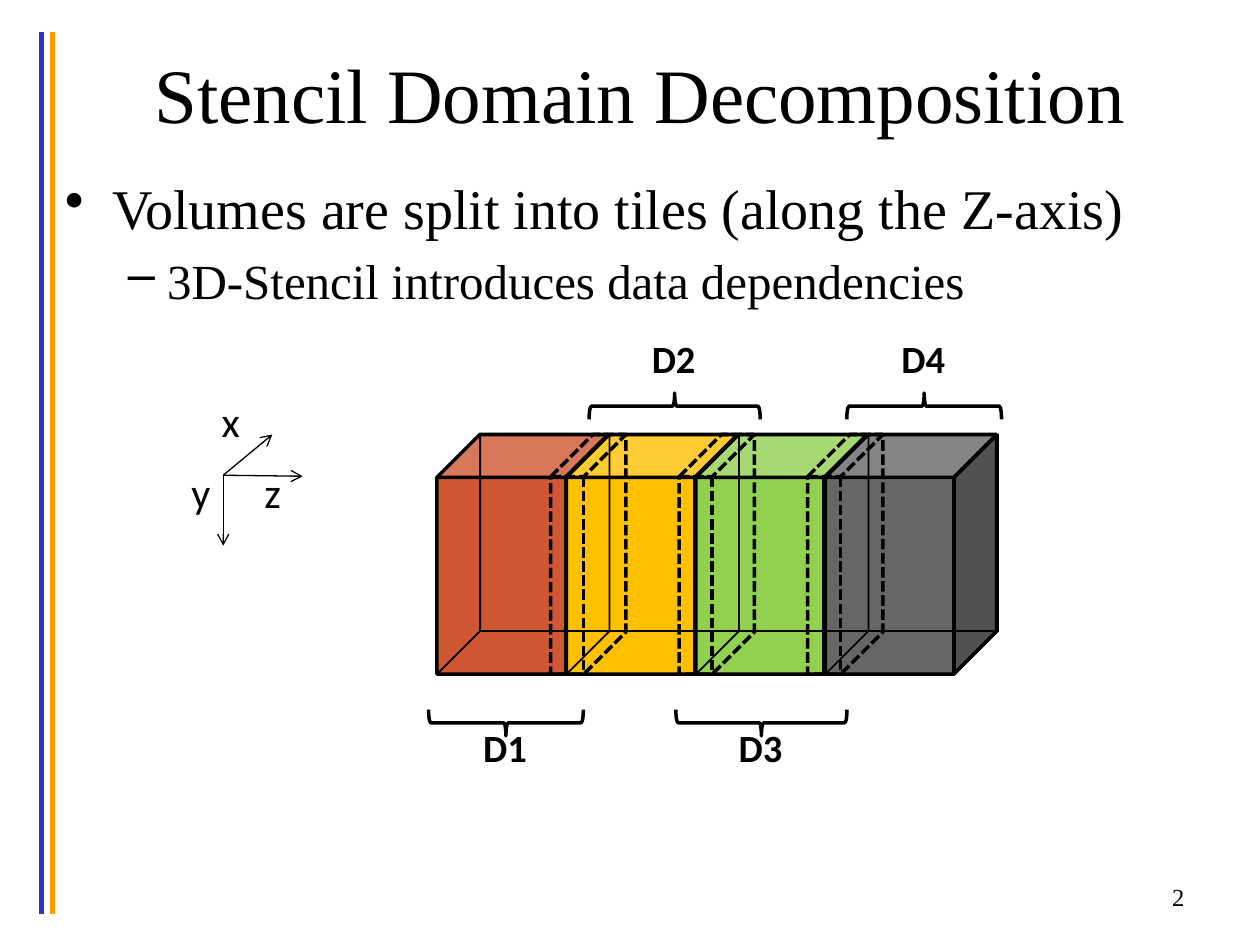
from lxml.etree import SubElement
from pptx import Presentation
from pptx.dml.color import RGBColor
from pptx.enum.dml import MSO_LINE
from pptx.enum.shapes import MSO_CONNECTOR, MSO_SHAPE
from pptx.enum.text import MSO_ANCHOR, PP_ALIGN
from pptx.oxml.ns import qn
from pptx.util import Cm, Pt

BLACK = "000000"
SERIF = "Times New Roman"
SANS = "Calibri"
TOP, HEIGHT, DEPTH = 8.76, 4.83, 0.87
LEFT, TILE = 8.81, 2.61


def color(value):
    """Turn a hex string into a colour."""
    return RGBColor.from_string(value)


class SlideBuilder:
    """Draw styled elements on the current slide."""

    def __init__(self, slide):
        """Keep the slide to draw on."""
        self.slide = slide

    def add_span(self, para, text, size, font, bold=False):
        """Add one formatted run to a paragraph."""
        span = para.add_run()
        span.text = text
        span.font.size = Pt(size)
        span.font.name = font
        span.font.bold = bold
        span.font.color.rgb = color(BLACK)

    def title(self, text, left, top, width, height):
        """Place and fill the title placeholder."""
        box = self.slide.shapes.title
        box.left, box.top, box.width, box.height = map(Cm, (left, top, width, height))
        frame = box.text_frame
        frame.vertical_anchor = MSO_ANCHOR.TOP
        frame.margin_top = Cm(0.3)
        para = frame.paragraphs[0]
        para.alignment = PP_ALIGN.CENTER
        self.add_span(para, text, 44, SERIF)

    def label(self, text, left, top, width, height, size, font=SANS,
              bold=False, align=PP_ALIGN.LEFT):
        """Add a one-line text box."""
        box = self.slide.shapes.add_textbox(Cm(left), Cm(top), Cm(width), Cm(height))
        box.text_frame.word_wrap = False
        para = box.text_frame.paragraphs[0]
        para.alignment = align
        self.add_span(para, text, size, font, bold)

    def bullets(self, items, left, top, width, height):
        """Add a bulleted list of (text, size, level, mark, margin, hang)."""
        box = self.slide.shapes.add_textbox(Cm(left), Cm(top), Cm(width), Cm(height))
        frame = box.text_frame
        frame.word_wrap = True
        for index, (text, size, level, mark, margin, hang) in enumerate(items):
            para = frame.add_paragraph() if index else frame.paragraphs[0]
            para.level = level
            para.space_before = Pt(size * 0.2)
            self.add_span(para, text, size, SERIF)
            properties = para._p.get_or_add_pPr()
            properties.set("marL", str(Cm(margin)))
            properties.set("indent", str(-Cm(hang)))
            SubElement(properties, qn("a:buChar")).set("char", mark)

    def line(self, start, end, stroke, weight, arrow=False):
        """Add a straight line, optionally with an arrowhead."""
        connector = self.slide.shapes.add_connector(
            MSO_CONNECTOR.STRAIGHT, *map(Cm, (*start, *end)))
        connector.line.color.rgb = color(stroke)
        connector.line.width = Pt(weight)
        properties = connector._element.spPr
        if arrow:
            SubElement(properties.find(qn("a:ln")), qn("a:tailEnd")).set("type", "arrow")
        SubElement(properties, qn("a:effectLst"))

    def shape(self, kind, left, top, width, height, weight, fill=None):
        """Add an outlined preset shape."""
        shape = self.slide.shapes.add_shape(
            kind, Cm(left), Cm(top), Cm(width), Cm(height))
        shape.shadow.inherit = False
        shape.line.color.rgb = color(BLACK)
        shape.line.width = Pt(weight)
        if fill:
            shape.fill.solid()
            shape.fill.fore_color.rgb = color(fill)
        else:
            shape.fill.background()
        return shape

    def cube(self, left, width, height, depth, weight, fill=None, dashed=False):
        """Add a cube in the volume row."""
        cube = self.shape(MSO_SHAPE.CUBE, left, TOP, width, height, weight, fill)
        cube.adjustments[0] = depth
        if dashed:
            cube.line.dash_style = MSO_LINE.SQUARE_DOT

    def brace(self, text, center, middle, length, rotation, label_top):
        """Add a turned brace with its domain name."""
        thick = 0.53
        brace = self.shape(MSO_SHAPE.LEFT_BRACE, center - thick / 2,
                           middle - length / 2, thick, length, 2)
        brace.rotation = rotation
        self.label(text, center - 0.71, label_top, 1.42, 1.22, 22, bold=True)


def main():
    """Build the stencil decomposition slide."""
    deck = Presentation()
    deck.slide_width, deck.slide_height = Cm(25.4), Cm(19.05)
    page = SlideBuilder(deck.slides.add_slide(deck.slide_layouts[5]))

    for left, stroke in ((0.84, "3333CC"), (1.06, "FF9900")):
        page.line((left, 0.64), (left, 18.42), stroke, 3)
    page.title("Stencil Domain Decomposition", 1.9, 0.64, 22.02, 3.18)
    page.bullets([
        ("Volumes are split into tiles (along the Z-axis)", 32, 0, "•", 0.95, 0.95),
        ("3D-Stencil introduces data dependencies", 28, 1, "–", 2.06, 0.79),
    ], 1.06, 3.38, 23.06, 2.97)

    origin = (4.5, 9.58)
    for end in ((6.1, 9.6), (4.5, 11), (5.49, 8.76)):
        page.line(origin, end, BLACK, 0.75, arrow=True)
    for name, left, top in (("x", 4.22, 7.85), ("y", 3.61, 9.27), ("z", 5.08, 9.27)):
        page.label(name, left, top, 0.8, 1.02, 24)

    fills = ("CF5731", "FFC000", "92D050", "666666")
    for index, fill in enumerate(fills):
        page.cube(LEFT + index * TILE, 3.45, HEIGHT, 0.25, 2, fill)
    for index in range(len(fills) - 1):
        page.cube(11.1 + index * 2.59, 1.52, HEIGHT, 0.56, 2, dashed=True)
    for index in range(len(fills) + 1):
        page.cube(LEFT + index * TILE, DEPTH, HEIGHT, 1, 1)
    for index in range(len(fills)):
        page.cube(LEFT + DEPTH + index * TILE, TILE, HEIGHT - DEPTH, 0, 1)

    above, below = (90, 6.63), (270, 14.48)
    page.brace("D1", 10.2, 14.57, 3.12, *below)
    page.brace("D2", 13.6, 8.19, 3.45, *above)
    page.brace("D3", 15.35, 14.57, 3.45, *below)
    page.brace("D4", 18.63, 8.19, 3.12, *above)

    page.label("2", 22.66, 17.65, 1.47, 1.02, 14, SERIF, align=PP_ALIGN.RIGHT)
    deck.save("out.pptx")


if __name__ == "__main__":
    main()
